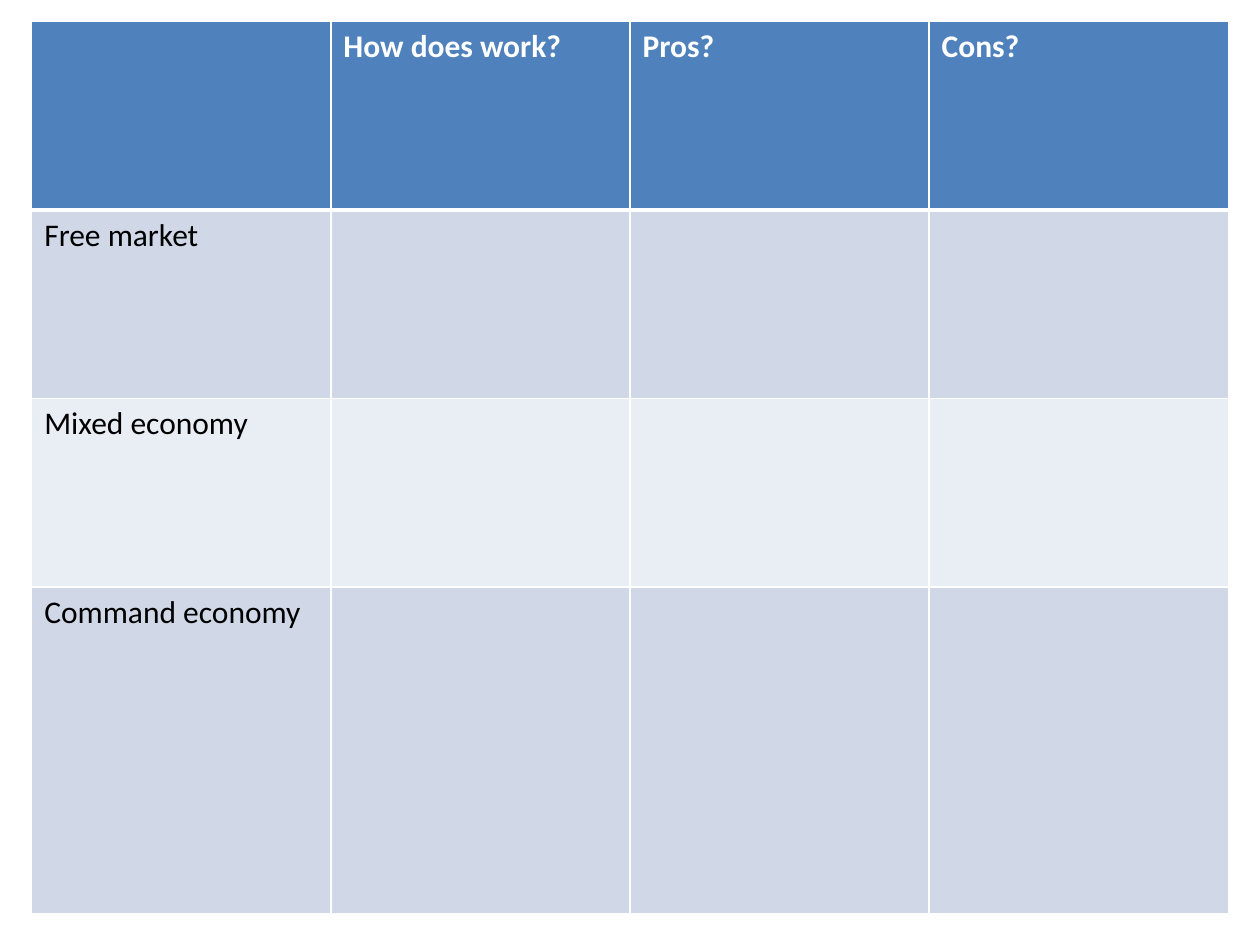
from pptx import Presentation
from pptx.dml.color import RGBColor
from pptx.oxml.ns import qn
from pptx.util import Cm, Pt
from lxml.etree import SubElement

ROWS = [
    ["", "How does work?", "Pros?", "Cons?"],
    ["Free market", "", "", ""],
    ["Mixed economy", "", "", ""],
    ["Command economy", "", "", ""],
]
ROW_HEIGHTS = [3.8, 3.8, 3.8, 6.58]
COLUMN_WIDTH = 6.03
HEADER_FILL = "4F81BD"
BAND_FILLS = ["E9EDF4", "D0D8E8"]
WHITE = "FFFFFF"
BLACK = "000000"


def color(hex_value):
    return RGBColor.from_string(hex_value)


def set_borders(cell, bottom_width, top_width):
    """Draw white lines around a cell, placed before its fill."""
    properties = cell._tc.get_or_add_tcPr()
    widths = {"a:lnL": 1, "a:lnR": 1, "a:lnT": top_width, "a:lnB": bottom_width}
    for tag, width in widths.items():
        line = SubElement(properties, qn(tag), w=str(Pt(width)))
        fill = SubElement(line, qn("a:solidFill"))
        SubElement(fill, qn("a:srgbClr"), val=WHITE)


def format_cell(cell, text, row_index):
    is_header = row_index == 0
    set_borders(cell, 3 if is_header else 1, 3 if row_index == 1 else 1)
    cell.fill.solid()
    cell.fill.fore_color.rgb = color(
        HEADER_FILL if is_header else BAND_FILLS[row_index % 2])
    cell.text_frame.text = text
    font = cell.text_frame.paragraphs[0].font
    for run in cell.text_frame.paragraphs[0].runs:
        font = run.font
    font.name = "Calibri"
    font.size = Pt(18)
    font.bold = is_header
    font.color.rgb = color(WHITE if is_header else BLACK)


def add_comparison_table(slide):
    column_count = len(ROWS[0])
    table = slide.shapes.add_table(
        len(ROWS), column_count, Cm(0.64), Cm(0.43),
        Cm(COLUMN_WIDTH * column_count), Cm(sum(ROW_HEIGHTS))).table
    for column in table.columns:
        column.width = Cm(COLUMN_WIDTH)
    for row_index, texts in enumerate(ROWS):
        table.rows[row_index].height = Cm(ROW_HEIGHTS[row_index])
        for column_index, text in enumerate(texts):
            format_cell(table.cell(row_index, column_index), text, row_index)


def main():
    presentation = Presentation()
    presentation.slide_width = Cm(25.4)
    presentation.slide_height = Cm(19.05)
    # Blank layout
    slide = presentation.slides.add_slide(presentation.slide_layouts[6])
    # Economic systems compared by how they work, pros and cons
    add_comparison_table(slide)
    presentation.save("out.pptx")


if __name__ == "__main__":
    main()
